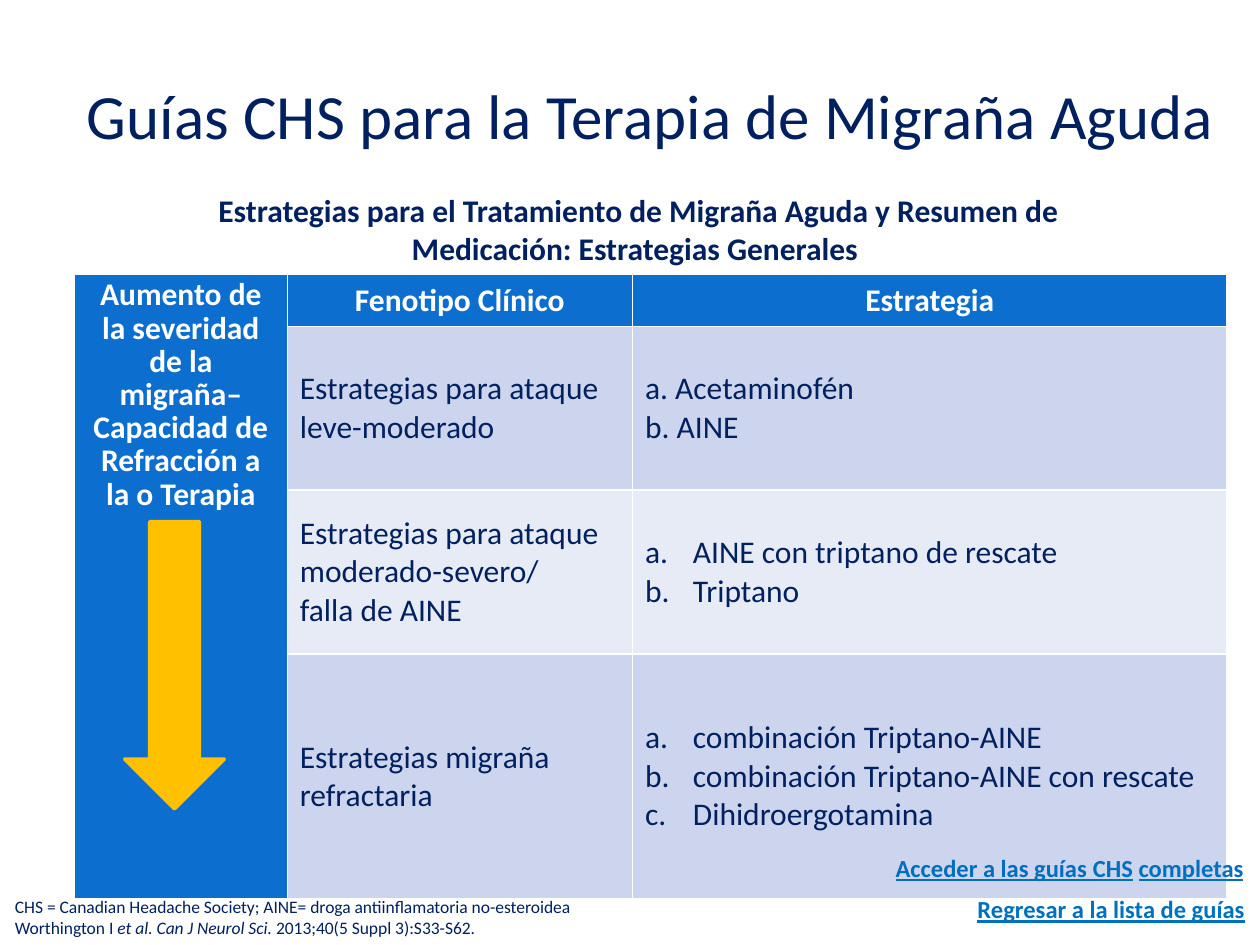
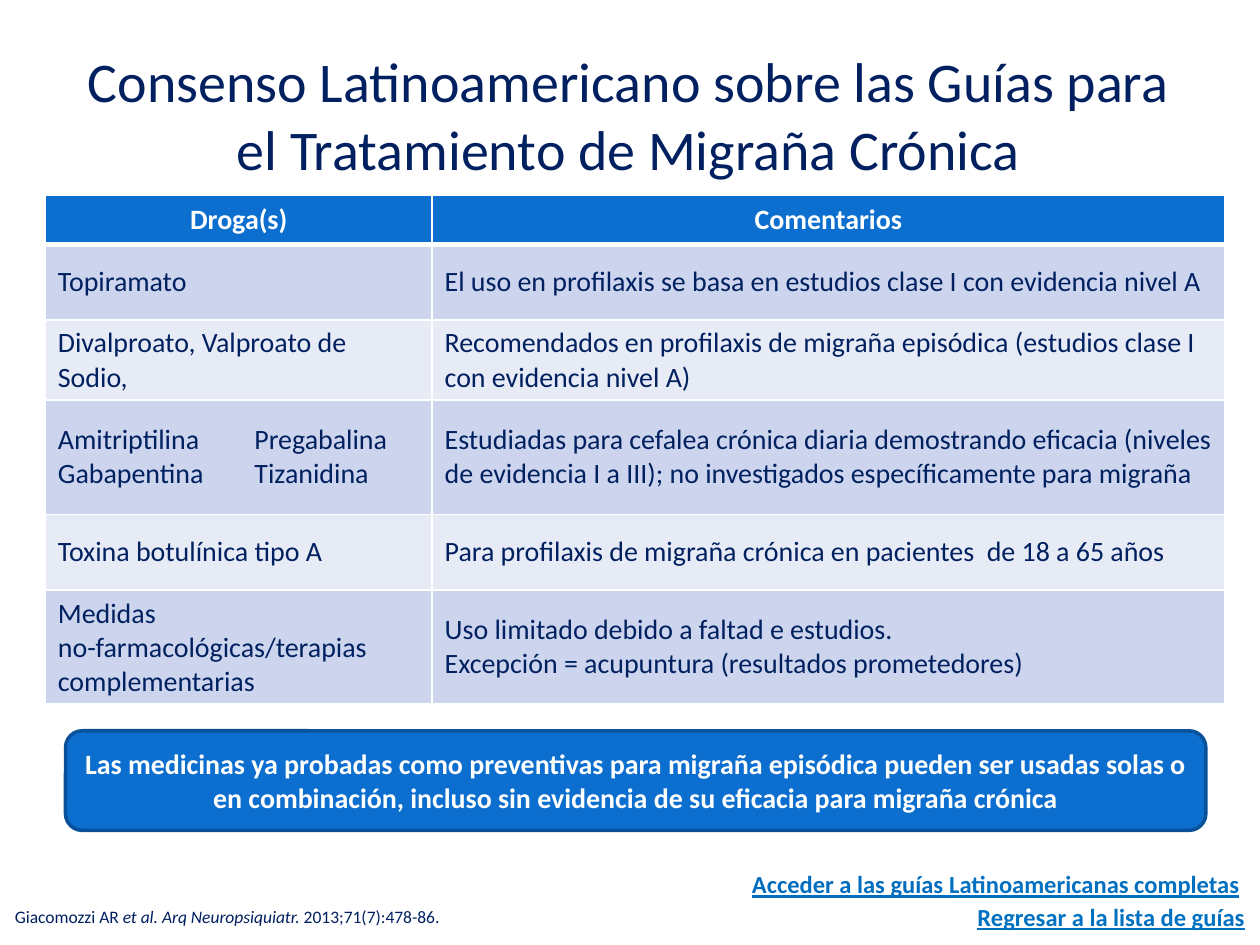
import pptx
import pptx.util
import pptx.dml.color
import pptx.enum.shapes
import pptx.enum.text
import pptx.oxml.ns
import lxml.etree

HUES = {
    "navy": "002060", "blue": "0C6FCF", "edge": "095299", "white": "FFFFFF",
    "pale": "CCD5ED", "mist": "E7EBF6", "gold": "FFC000",
    "link": "0070C0", "deep": "006DBF",
}
RGB = {name: pptx.dml.color.RGBColor.from_string(code) for name, code in HUES.items()}
FACE = "Calibri"
MID = pptx.enum.text.PP_ALIGN.CENTER
CORE = pptx.enum.text.MSO_ANCHOR.MIDDLE
SHAPE = pptx.enum.shapes.MSO_SHAPE

deck = pptx.Presentation()
deck.slide_width = pptx.util.Inches(10)
deck.slide_height = pptx.util.Inches(7.5)

# The slide is a grid of 10 columns by 7.5 rows
COL = deck.slide_width / 10
ROW = deck.slide_height / 7.5


def write(frame, paras, size, hue="navy", bold=False, align=None, under=None,
          marks=False, lead=None):
    """Fill a text frame; a paragraph is a string or a list of (text, style) runs."""
    frame.word_wrap = True
    for n, item in enumerate(paras):
        para = frame.paragraphs[0] if n == 0 else frame.add_paragraph()
        if marks:
            props = para._p.get_or_add_pPr()
            props.set("marL", str(int(0.38 * COL)))
            props.set("indent", str(int(-0.38 * COL)))
            lxml.etree.SubElement(props, pptx.oxml.ns.qn("a:buAutoNum"), type="alphaLcPeriod")
        if isinstance(item, str):
            para.text = item
        else:
            for text, style in item:
                run = para.add_run()
                run.text = text
                for key, value in style.items():
                    if key == "hue":
                        run.font.color.rgb = RGB[value]
                    else:
                        setattr(run.font, key, value)
        para.alignment = align
        para.line_spacing = lead
        para.font.name = FACE
        para.font.size = pptx.util.Pt(size)
        para.font.bold = bold
        para.font.underline = under
        para.font.color.rgb = RGB[hue]


def grid(slide, left, top, cols, rows, cells, size, spans, rule=1, marks=(), seam=()):
    """Add a table with a blue head and striped rows; None is a spanned cell."""
    table = slide.shapes.add_table(
        len(rows), len(cols), int(left * COL), int(top * ROW),
        int(sum(cols) * COL), int(sum(rows) * ROW)).table
    for n, wide in enumerate(cols):
        table.columns[n].width = int(wide * COL)
    for r, tall in enumerate(rows):
        table.rows[r].height = int(tall * ROW)
        for c in range(len(cols)):
            cell = table.cell(r, c)
            props = cell._tc.get_or_add_tcPr()
            for side in "LRTB":
                thick = rule if (r, side) in ((0, "B"), (1, "T")) else 1
                line = lxml.etree.SubElement(
                    props, pptx.oxml.ns.qn("a:ln" + side), w=str(pptx.util.Pt(thick)))
                if (r, c, side) in seam:
                    lxml.etree.SubElement(line, pptx.oxml.ns.qn("a:noFill"))
                else:
                    fill = lxml.etree.SubElement(line, pptx.oxml.ns.qn("a:solidFill"))
                    lxml.etree.SubElement(fill, pptx.oxml.ns.qn("a:srgbClr"), val=HUES["white"])
            head = r == 0
            cell.fill.solid()
            cell.fill.fore_color.rgb = RGB["blue" if head else "pale" if r % 2 else "mist"]
            cell.vertical_anchor = CORE
            if cells[r][c]:
                write(cell.text_frame, cells[r][c], size, "white" if head else "navy",
                      head, MID if head else None, marks=(r, c) in marks)
    for first, last in spans:
        table.cell(*first).merge(table.cell(*last))
    return table


# Titles and sources
ITAL = {"italic": True}
heads = [
    ("Guías CHS para la Terapia de Migraña Aguda", 36, 9.34, 7.06,
     ["CHS = Canadian Headache Society; AINE= droga antiinflamatoria no-esteroidea",
      [("Worthington I ", {}), ("et al. Can J Neurol Sci. ", ITAL),
       ("2013;40(5 Suppl 3):S33-S62.", {})]]),
    ("Consenso Latinoamericano sobre las Guías para el Tratamiento de Migraña Crónica",
     32, 9, 7.14,
     [[("Giacomozzi AR ", {}), ("et al. Arq Neuropsiquiatr. ", ITAL),
       ("2013;71(7):478-86.", {})]]),
]
slides = []
for title, size, wide, top, source in heads:
    slide = deck.slides.add_slide(deck.slide_layouts[6])
    slides.append(slide)
    note = slide.shapes.add_textbox(
        int(0.02 * COL), int(top * ROW), int(6.61 * COL), int((7.5 - top) * ROW))
    write(note.text_frame, source, 10)
    box = slide.shapes.add_textbox(
        int(0.49 * COL), int(0.28 * ROW), int(wide * COL), int(1.25 * ROW))
    box.text_frame.vertical_anchor = CORE
    write(box.text_frame, [title], size, align=MID)
acute, chronic = slides

# Acute therapy: subtitle, table and arrow
box = acute.shapes.add_textbox(
    int(1.22 * COL), int(1.47 * ROW), int(7.64 * COL), int(0.71 * ROW))
write(box.text_frame,
      [" Estrategias para el Tratamiento de Migraña Aguda y Resumen de "
       "Medicación: Estrategias Generales"], 18, bold=True, align=MID)

table = grid(
    acute, 0.59, 2.18, [1.69, 2.74, 4.72], [0.41, 1.3, 1.3, 1.3],
    [[None, ["Fenotipo Clínico"], ["Estrategia"]],
     [None, ["Estrategias para ataque leve-moderado"], ["a. Acetaminofén", "b. AINE"]],
     [None, ["Estrategias para ataque moderado-severo/\nfalla de AINE"],
      ["AINE con triptano de rescate", "Triptano"]],
     [None, ["Estrategias migraña refractaria"],
      ["combinación Triptano-AINE", "combinación Triptano-AINE con rescate",
       "Dihidroergotamina"]]],
    18, [((0, 0), (3, 0))], marks=[(2, 2), (3, 2)])
side = table.cell(0, 0)
side.vertical_anchor = pptx.enum.text.MSO_ANCHOR.TOP
write(side.text_frame,
      ["Aumento de la severidad de la migraña– Capacidad de Refracción a la o Terapia"],
      18, "white", True, MID, lead=pptx.util.Pt(19))

arrow = acute.shapes.add_shape(
    SHAPE.DOWN_ARROW, int(0.99 * COL), int(4.14 * ROW), int(0.79 * COL), int(2.28 * ROW))

# Chronic therapy: table and key message
grid(
    chronic, 0.36, 1.55, [1.56, 1.51, 6.29], [0.39, 0.6, 0.63, 0.91, 0.6, 0.71],
    [[["Droga(s)"], None, ["Comentarios"]],
     [["Topiramato"], None,
      ["El uso en profilaxis se basa en estudios clase I con evidencia nivel A"]],
     [["Divalproato, Valproato de Sodio,"], None,
      ["Recomendados en profilaxis de migraña episódica (estudios clase I "
       "con evidencia nivel A)"]],
     [["Amitriptilina", "Gabapentina"], ["Pregabalina", "Tizanidina"],
      ["Estudiadas para cefalea crónica diaria demostrando eficacia (niveles de "
       "evidencia I a III); no investigados específicamente para migraña"]],
     [["Toxina botulínica tipo A"], None,
      ["Para profilaxis de migraña crónica en pacientes  de 18 a 65 años"]],
     [["Medidas no-farmacológicas/terapias complementarias"], None,
      ["Uso limitado debido a faltad e estudios.",
       "Excepción = acupuntura (resultados prometedores)"]]],
    16, [((r, 0), (r, 1)) for r in (0, 1, 2, 4, 5)], rule=3,
    seam=[(3, 0, "R"), (3, 1, "L")])

key = chronic.shapes.add_shape(
    SHAPE.ROUNDED_RECTANGLE, int(0.52 * COL), int(5.8 * ROW), int(9.05 * COL), int(0.79 * ROW))
key.text_frame.vertical_anchor = CORE
write(key.text_frame,
      ["Las medicinas ya probadas como preventivas para migraña episódica pueden ser usadas "
       "solas o en combinación, incluso sin evidencia de su eficacia para migraña crónica"],
      16, "white", True, MID)

for shape, fill, edge in ((arrow, "gold", "gold"), (key, "blue", "edge")):
    shape.shadow.inherit = False
    shape.fill.solid()
    shape.fill.fore_color.rgb = RGB[fill]
    shape.line.color.rgb = RGB[edge]
    shape.line.width = pptx.util.Pt(2)

# Link lines at the lower right
back = "Regresar a la lista de guías"
start = ("Acceder a las guías ", {"hue": "deep"})
links = [
    (acute, 7.66, 7.05, 2.34, back),
    (acute, 7.01, 6.72, 2.98,
     [start, ("CHS", {}), (" ", {"underline": False}), ("completas", {})]),
    (chronic, 7.66, 7.11, 2.34, back),
    (chronic, 5.87, 6.85, 4.23, [start, ("Latinoamericanas completas", {})]),
]
for slide, left, top, wide, text in links:
    box = slide.shapes.add_textbox(
        int(left * COL), int(top * ROW), int(wide * COL), int(0.34 * ROW))
    write(box.text_frame, [text], 14, "link", True, under=True)
    box.text_frame.word_wrap = False
    box.text_frame.auto_size = pptx.enum.text.MSO_AUTO_SIZE.SHAPE_TO_FIT_TEXT

deck.save("out.pptx")
